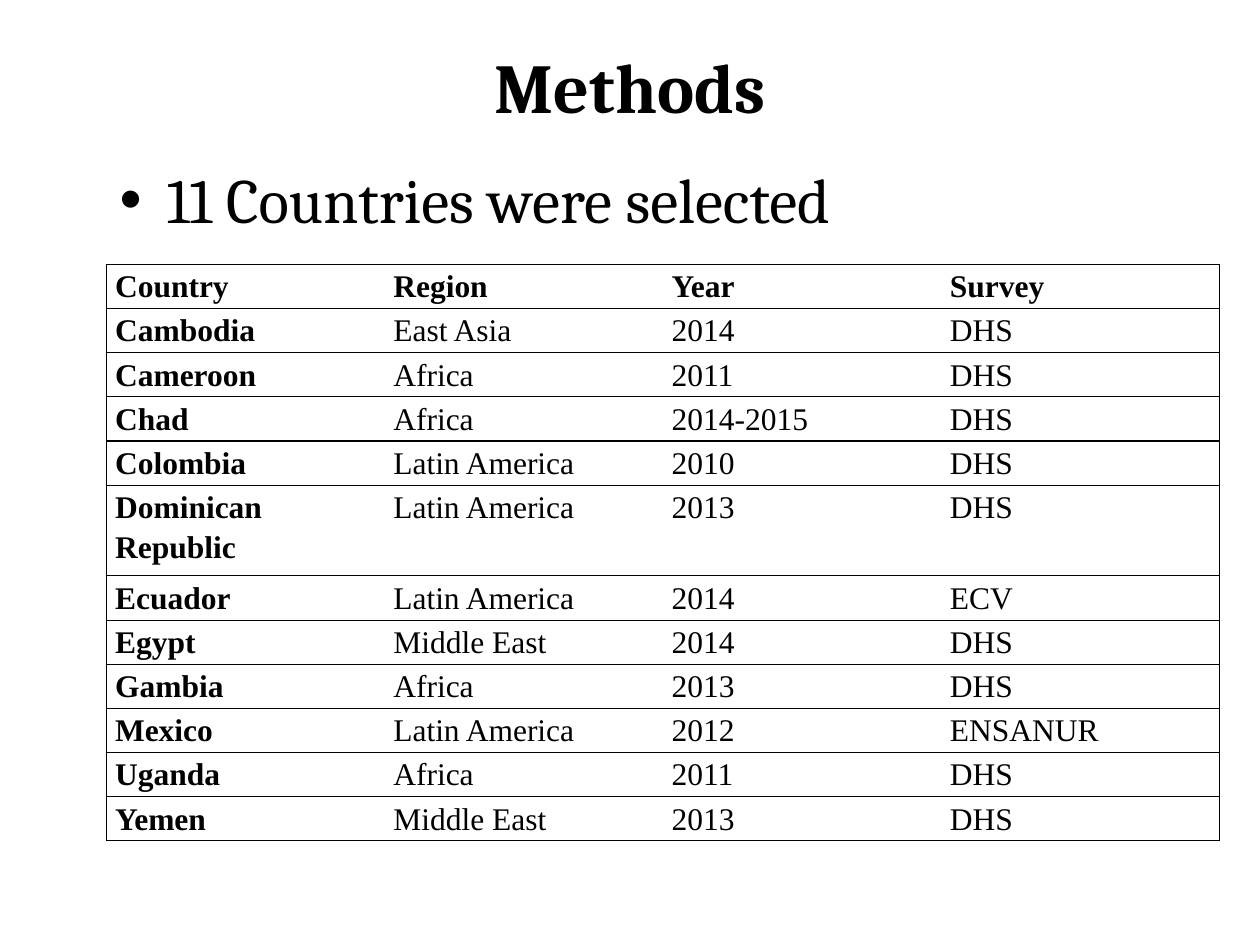
"""Build the Methods slide with its table of selected countries."""
from dataclasses import dataclass

from lxml import etree
from pptx import Presentation
from pptx.dml.color import RGBColor
from pptx.enum import text as t
from pptx.oxml import ns
from pptx.util import Cm, Pt


@dataclass(frozen=True)
class Theme:
    ink: str = "000000"
    paper: str = "FFFFFF"
    serif: str = "Cambria"
    roman: str = "Times New Roman"
    head: int = 40
    body: int = 36
    cell: int = 18
    rule: float = 0.75


THEME = Theme()
ROWS = [
    ("Country", "Region", "Year", "Survey"),
    ("Cambodia", "East Asia", "2014", "DHS"),
    ("Cameroon", "Africa", "2011", "DHS"),
    ("Chad", "Africa", "2014-2015", "DHS"),
    ("Colombia", "Latin America", "2010", "DHS"),
    ("Dominican Republic", "Latin America", "2013", "DHS"),
    ("Ecuador", "Latin America", "2014", "ECV"),
    ("Egypt", "Middle East", "2014", "DHS"),
    ("Gambia", "Africa", "2013", "DHS"),
    ("Mexico", "Latin America", "2012", "ENSANUR"),
    ("Uganda", "Africa", "2011", "DHS"),
    ("Yemen", "Middle East", "2013", "DHS"),
]
WIDTH, LOW, TALL = Cm(5.61), Cm(0.89), Cm(1.83)
WRAPPED = "Dominican Republic"


def style(para, face, size, bold=False):
    for run in para.runs:
        run.font.name = face
        run.font.size = Pt(size)
        run.font.bold = bold
        run.font.color.rgb = RGBColor.from_string(THEME.ink)


def add_text(slide, words, box, size, bold=False):
    frame = slide.shapes.add_textbox(*map(Cm, box)).text_frame
    frame.word_wrap = True
    frame.vertical_anchor = t.MSO_ANCHOR.TOP
    frame.text = words
    para = frame.paragraphs[0]
    style(para, THEME.serif, size, bold)
    return para


def add_bullet(para, indent):
    props = para._p.get_or_add_pPr()
    props.set("marL", str(indent))
    props.set("indent", str(-indent))
    color = etree.SubElement(props, ns.qn("a:buClr"))
    etree.SubElement(color, ns.qn("a:srgbClr"), val=THEME.ink)
    etree.SubElement(props, ns.qn("a:buFont"), typeface="Arial")
    etree.SubElement(props, ns.qn("a:buChar"), char="•")


def set_edges(cell, shown):
    props = cell._tc.get_or_add_tcPr()
    for spot, side in enumerate("LRTB"):
        line = etree.Element(ns.qn(f"a:ln{side}"), w=str(Pt(THEME.rule)))
        if side in shown:
            fill = etree.SubElement(line, ns.qn("a:solidFill"))
            etree.SubElement(fill, ns.qn("a:srgbClr"), val=THEME.ink)
        else:
            etree.SubElement(line, ns.qn("a:noFill"))
        props.insert(spot, line)


def fill_cell(cell, words, bold, edges):
    cell.margin_left = cell.margin_right = Cm(0.18)
    cell.margin_top = cell.margin_bottom = 0
    cell.fill.solid()
    cell.fill.fore_color.rgb = RGBColor.from_string(THEME.paper)
    cell.text_frame.text = words
    para = cell.text_frame.paragraphs[0]
    para.alignment = t.PP_ALIGN.JUSTIFY
    para.line_spacing = 1.15
    style(para, THEME.roman, THEME.cell, bold)
    set_edges(cell, edges)


def add_grid(slide, rows, left, top):
    count = len(rows[0])
    high = LOW * (len(rows) - 1) + TALL
    grid = slide.shapes.add_table(
        len(rows), count, left, top, WIDTH * count, high).table
    grid.first_row = grid.horz_banding = False
    for col in grid.columns:
        col.width = WIDTH
    for r, row in enumerate(rows):
        grid.rows[r].height = TALL if row[0] == WRAPPED else LOW
        for c, words in enumerate(row):
            edges = "TB" + "L" * (c == 0) + "R" * (c == count - 1)
            fill_cell(grid.cell(r, c), words, r == 0 or c == 0, edges)


def main():
    deck = Presentation()
    deck.slide_width, deck.slide_height = Cm(25.4), Cm(19.05)
    slide = deck.slides.add_slide(deck.slide_layouts[6])
    title = add_text(slide, "Methods", (1.27, 0.76, 22.86, 3.18),
                     THEME.head, True)
    title.alignment = t.PP_ALIGN.CENTER
    point = add_text(slide, "11 Countries were selected",
                     (2.16, 3.12, 22.43, 11.94), THEME.body)
    add_bullet(point, Cm(0.95))
    add_grid(slide, ROWS, Cm(2.14), Cm(5.33))
    deck.save("out.pptx")


if __name__ == "__main__":
    main()
